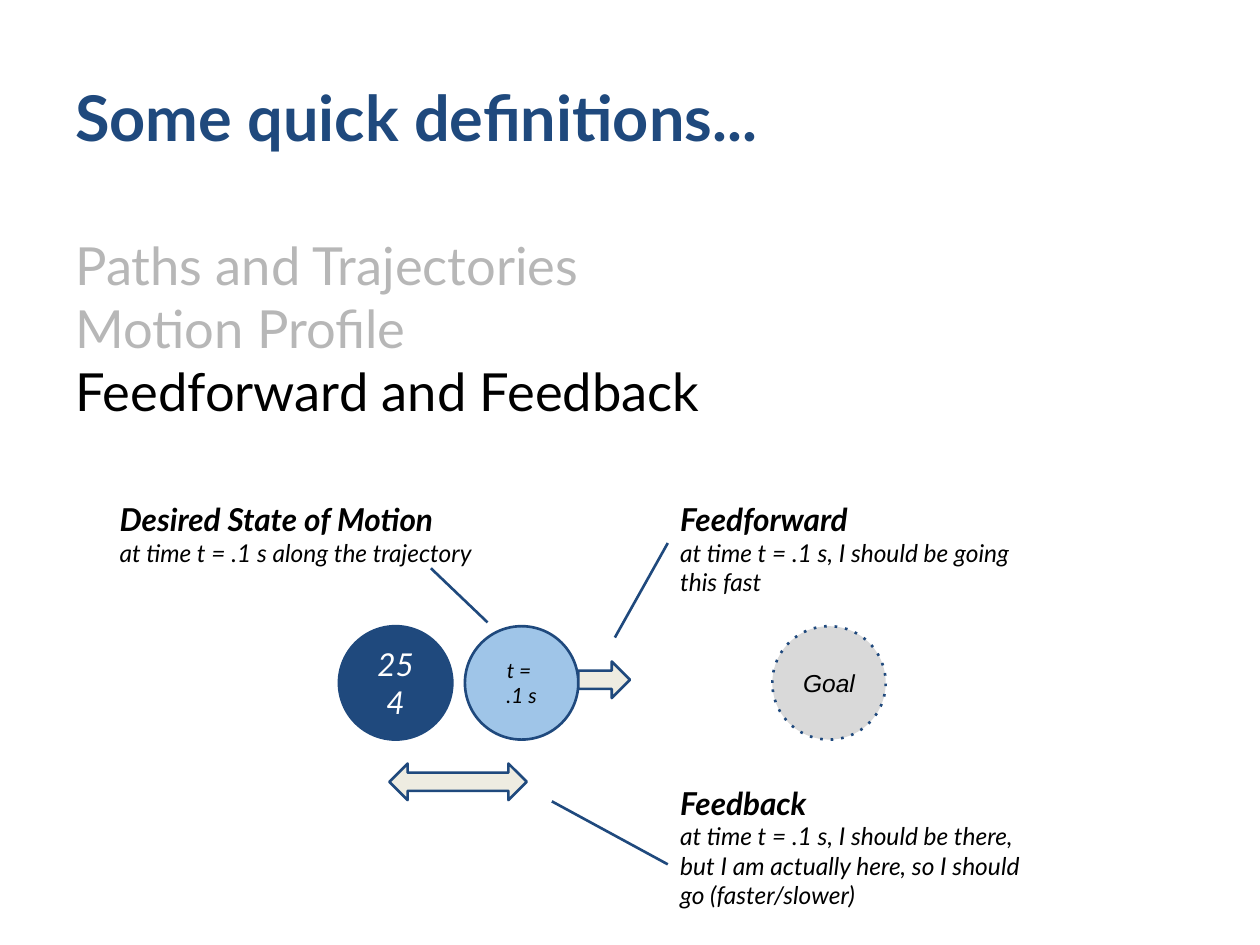
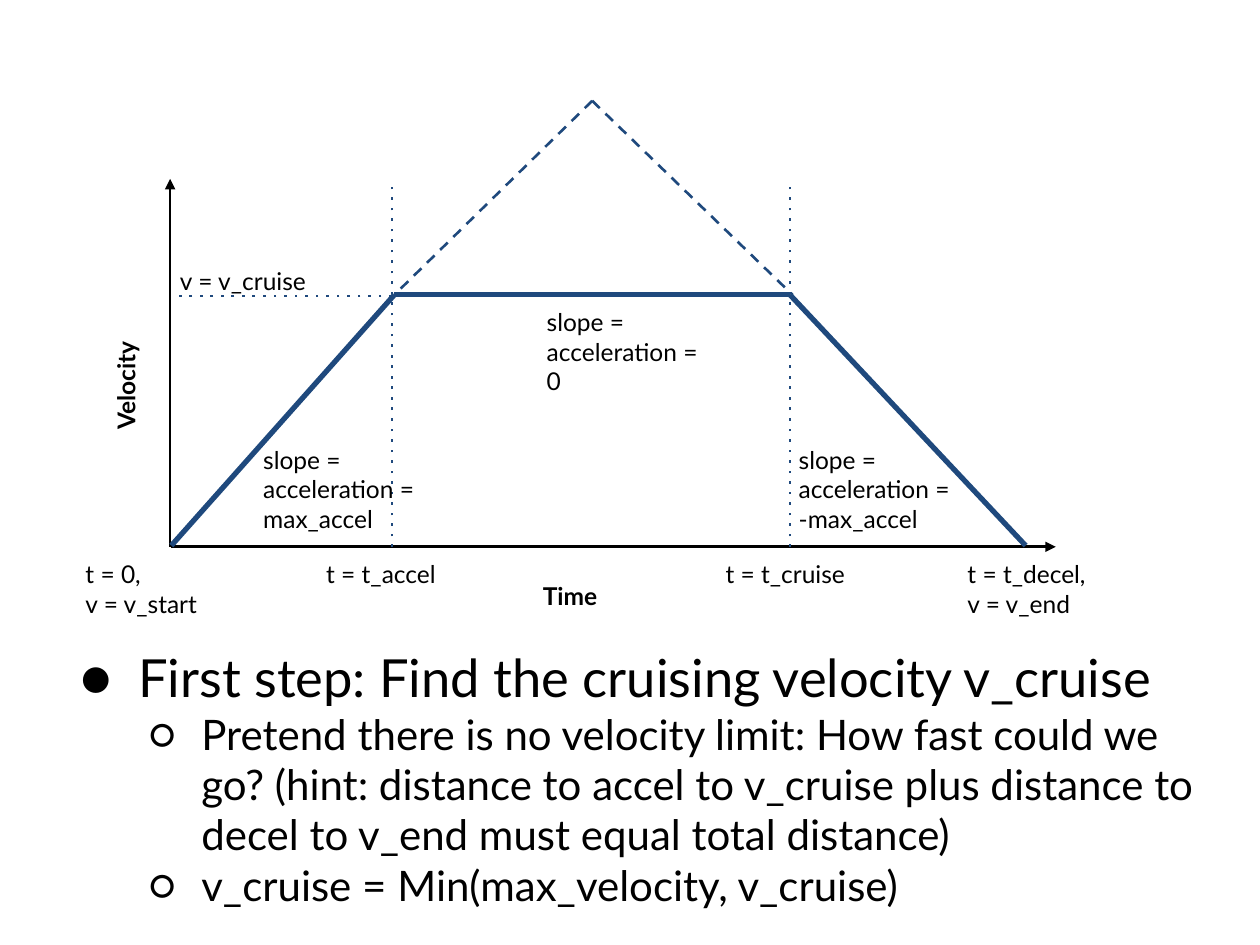
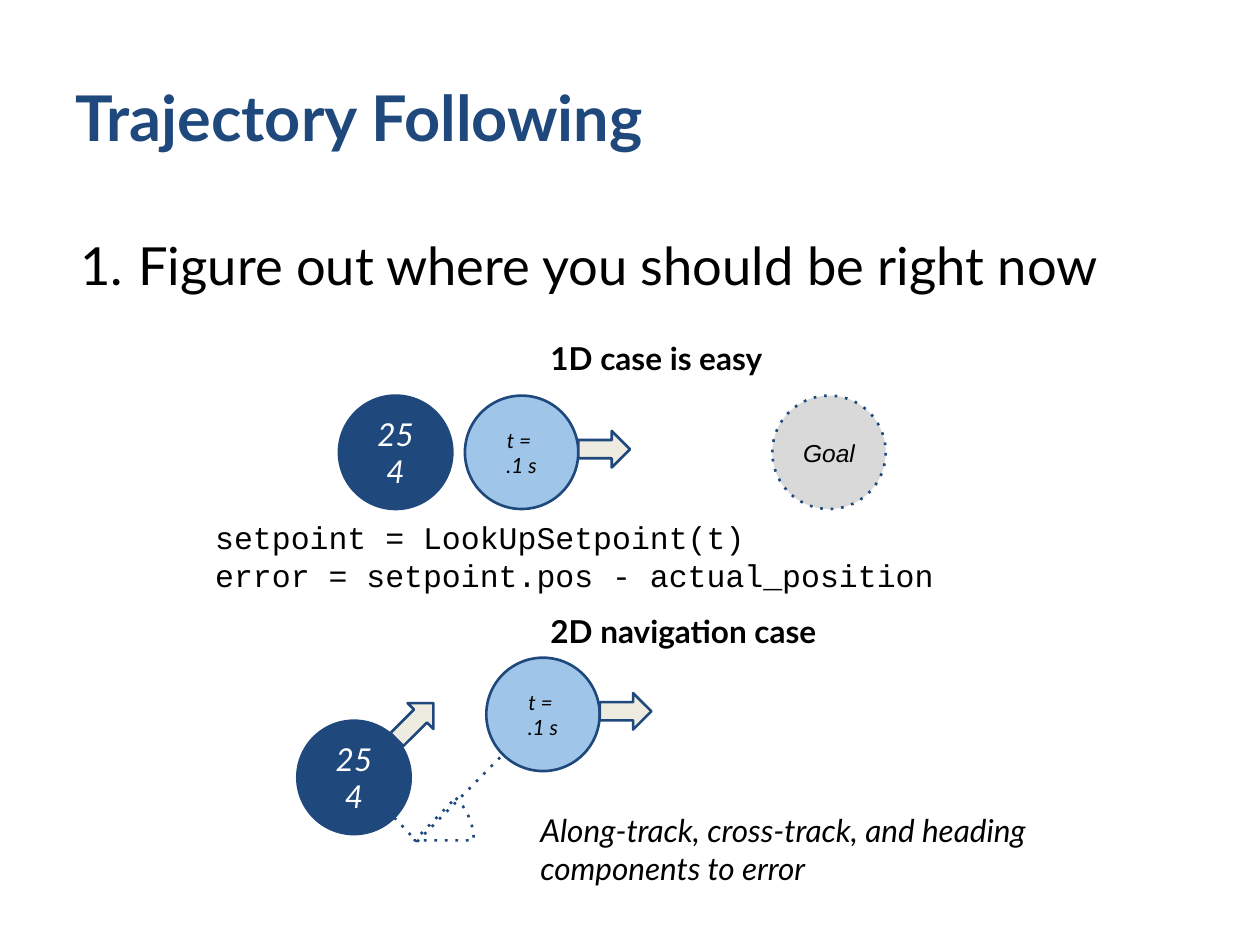
from lxml.etree import SubElement
from pptx import Presentation
from pptx.dml.color import RGBColor
from pptx.enum.shapes import MSO_CONNECTOR, MSO_SHAPE
from pptx.enum.text import MSO_ANCHOR, PP_ALIGN
from pptx.oxml.ns import qn
from pptx.util import Inches, Pt

COLUMNS, ROWS = 100, 75
CELL = Inches(10) / COLUMNS
COLORS = {
    "navy": "1F497D",
    "sky": "9FC5E8",
    "cream": "EEECE1",
    "mist": "D9D9D9",
    "gray": "B7B7B7",
    "black": "000000",
    "white": "FFFFFF",
}
FONT = "Lato"
TITLE = {"size": 36, "bold": True, "color": "navy"}
BODY = {"size": 30}
HEAD = {"size": 18, "bold": True}
LABEL = {"size": 14}
AXIS = {"size": 14, "bold": True}
NOTE = {"size": 18, "italic": True}
CODE = {"size": 18, "name": "Courier New"}
BALL = 9
ARROW = (4.1, 2.9)


def grid(*cells):
    return [round(cell * CELL) for cell in cells]


def rgb(name):
    return RGBColor.from_string(COLORS[name])


def style_font(font, style):
    values = {"name": FONT, "color": "black", **style}
    font.color.rgb = rgb(values.pop("color"))
    values["size"] = Pt(values["size"])
    for name, value in values.items():
        setattr(font, name, value)


def add_bullet(para, mark, margin, indent):
    props = para._p.get_or_add_pPr()
    props.set("marL", str(Inches(margin)))
    props.set("indent", str(Inches(indent)))
    color = SubElement(props, qn("a:buClr"))
    SubElement(color, qn("a:srgbClr"), val=COLORS["black"])
    SubElement(props, qn("a:buFont"), typeface=FONT)
    if mark == "1.":
        SubElement(props, qn("a:buAutoNum"), type="arabicPeriod")
    else:
        SubElement(props, qn("a:buChar"), char=mark)


def fill_text(shape, lines, align=PP_ALIGN.LEFT, anchor=MSO_ANCHOR.TOP, side=0.1):
    frame = shape.text_frame
    values = {
        "word_wrap": True,
        "vertical_anchor": anchor,
        "margin_left": Inches(side),
        "margin_right": Inches(side),
        "margin_top": Inches(0.1),
        "margin_bottom": Inches(0.1),
    }
    for name, value in values.items():
        setattr(frame, name, value)
    for index, (words, style, *bullet) in enumerate(lines):
        para = frame.add_paragraph() if index else frame.paragraphs[0]
        para.alignment = align
        if bullet:
            add_bullet(para, *bullet)
        span = para.add_run()
        span.text = words
        style_font(span.font, style)


def add_text(page, box, lines, **layout):
    shape = page.shapes.add_textbox(*grid(*box))
    fill_text(shape, lines, **layout)
    return shape


def style_line(shape, color="navy", width=1.5, dash=None, arrow=False):
    shape.line.color.rgb = rgb(color)
    shape.line.width = Pt(width)
    outline = shape._element.spPr.find(qn("a:ln"))
    if dash:
        SubElement(outline, qn("a:prstDash"), val=dash)
    if arrow:
        SubElement(outline, qn("a:tailEnd"), type="triangle")


def add_line(page, start, end, **style):
    line = page.shapes.add_connector(MSO_CONNECTOR.STRAIGHT, *grid(*start, *end))
    style_line(line, **style)
    SubElement(line._element.spPr, qn("a:effectLst"))


def add_figure(page, kind, box, fill=None, dash=None):
    shape = page.shapes.add_shape(kind, *grid(*box))
    shape.shadow.inherit = False
    if fill:
        shape.fill.solid()
        shape.fill.fore_color.rgb = rgb(fill)
    else:
        shape.fill.background()
    style_line(shape, dash=dash)
    return shape


def add_ball(page, left, top, fill, lines, dash=None, side=0.1):
    ball = add_figure(page, MSO_SHAPE.OVAL, (left, top, BALL, BALL), fill, dash)
    fill_text(ball, lines, PP_ALIGN.CENTER, MSO_ANCHOR.MIDDLE, side)


def add_arrow(page, left, top, turn=0):
    arrow = add_figure(page, MSO_SHAPE.RIGHT_ARROW, (left, top, *ARROW), "cream")
    arrow.rotation = turn


def add_robot(page, left, top):
    add_ball(page, left, top, "navy", [("254", {**NOTE, "color": "white"})], side=0.11)


def add_setpoint(page, left, top):
    style = {"size": 12, "italic": True}
    add_ball(page, left, top, "sky", [("t = ", style), (".1 s", style)])
    add_arrow(page, left + BALL, top + 2.8)


def add_track(page, left, top):
    goal = {"size": 14, "italic": True, "name": "Arial"}
    add_ball(page, left + 34.4, top, "mist", [("Goal", goal)], dash="dot")
    add_robot(page, left, top)
    add_setpoint(page, left + 10, top)


def add_title(page, words):
    add_text(page, (5, 3, 90, 12.5), [(words, TITLE)], anchor=MSO_ANCHOR.MIDDLE)


def add_callout(page, box, head, note, start, end):
    lines = [(head, {**HEAD, "italic": True}), (note, {**LABEL, "italic": True})]
    add_text(page, box, lines)
    left, top = box[:2]
    add_line(page, (left + start[0], top + start[1]), (left + end[0], top + end[1]))


def add_profile(page, left, base):
    accel, cruise, stop = 17.6, 49.2, 67.9
    speed, peak, marker = 20, 35.4, 28.9

    def draw(start, end, **style):
        points = [(left + x, base - y) for x, y in (start, end)]
        add_line(page, *points, **style)

    draw((0, 0), (0, 29.2), color="black", arrow=True)
    draw((0.1, 0), (70.3, 0), color="black", arrow=True)
    corners = [(0.1, 0.1), (accel + 0.2, speed), (cruise, speed), (stop, 0.1)]
    for start, end in zip(corners, corners[1:]):
        draw(start, end, width=3)
    for time in (accel, cruise):
        draw((time, 0), (time, marker), dash="dot")
        draw((33.5, peak), (time + 0.2, speed), dash="dash")
    draw((accel, speed - 0.1), (0.1, speed - 0.1), dash="dot")

    slope = "slope = acceleration = "
    labels = [
        (-7.7, 0, ["t = 0,", "v = v_start"], LABEL),
        (11.4, 0, ["t = t_accel"], LABEL),
        (43.1, 0, ["t = t_cruise"], LABEL),
        (62.3, 0, ["t = t_decel,", "v = v_end"], LABEL),
        (28.6, -1.7, ["Time"], AXIS),
        (-0.2, 23.3, ["v = v_cruise"], LABEL),
        (6.4, 9.1, [slope + "max_accel"], LABEL),
        (28.9, 20, [slope + "0"], LABEL),
        (48.9, 9.1, [slope + "-max_accel"], LABEL),
        (-10.2, 18.9, ["Velocity"], AXIS),
    ]
    for x, y, lines, style in labels:
        box = (left + x, base - y, 15.1, 6.1)
        label = add_text(page, box, [(words, style) for words in lines])
    label.rotation = 270


def add_navigation(page, left, top):
    add_robot(page, left, top + 5)
    add_setpoint(page, left + 15, top)
    add_arrow(page, left + 7.3, top + 3.6, 315)
    corner = (left + 9.5, top + 14.6)
    add_line(page, (left + 7.7, top + 12.7), corner, dash="dot")
    add_line(page, corner, (left + 16.3, top + 7.7), dash="dot")
    heading = add_figure(
        page, MSO_SHAPE.PIE, (left + 4.6, top + 9.8, 9.4, 9.4), dash="dot"
    )
    heading.adjustments[0] = 188.48
    heading.adjustments[1] = 0
    error = "Along-track, cross-track, and heading components to error"
    add_text(page, (left + 18.3, top + 11.2, 44.6, 6.3), [(error, NOTE)])


def build_definitions(page):
    add_title(page, "Some quick definitions...")
    muted = {**BODY, "color": "gray"}
    topics = [
        ("Paths and Trajectories", muted),
        ("Motion Profile", muted),
        ("Feedforward and Feedback", BODY),
    ]
    add_text(page, (5, 17.5, 90, 17.5), topics)
    add_track(page, 26.9, 49.7)
    add_figure(page, MSO_SHAPE.LEFT_RIGHT_ARROW, (30.9, 60.6, 10.9, 2.9), "cream")
    callouts = [
        ((53, 38.7, 30.8, 9), "Feedforward",
         "at time t = .1 s, I should be going this fast",
         (-4.2, 11.9), (0, 4.4)),
        ((53, 61.2, 30.8, 9), "Feedback",
         "at time t = .1 s, I should be there, but I am actually here, "
         "so I should go (faster/slower)",
         (0, 7.4), (-9.2, 2.4)),
        ((8.5, 38.7, 36.1, 9), "Desired State of Motion",
         "at time t = .1 s along the trajectory",
         (30.2, 10.7), (25.7, 6.4)),
    ]
    for callout in callouts:
        add_callout(page, *callout)


def build_profile(page):
    step = {"size": 24}
    bullets = [
        ("First step: Find the cruising velocity v_cruise", BODY, "●", 0.5, -0.46),
        ("Pretend there is no velocity limit: How fast could we go? "
         "(hint: distance to accel to v_cruise plus distance to decel to v_end "
         "must equal total distance)", step, "○", 1, -0.42),
        ("v_cruise = Min(max_velocity, v_cruise)", step, "○", 1, -0.42),
    ]
    add_text(page, (5, 50.2, 93.7, 24.1), bullets)
    add_profile(page, 13.5, 43.4)


def build_following(page):
    add_title(page, "Trajectory Following")
    step = ("Figure out where you should be right now", BODY, "1.", 0.5, -0.46)
    add_text(page, (5, 17.5, 90, 6.9), [step])
    add_track(page, 26.9, 31.4)
    for top, words in ((25.9, "1D case is easy"), (47.6, "2D navigation case")):
        add_text(page, (42.7, top, 29.1, 6.3), [(words, HEAD)])
    code = ["setpoint = LookUpSetpoint(t)", "error = setpoint.pos - actual_position"]
    add_text(page, (16.1, 40.1, 70.6, 6.3), [(line, CODE) for line in code])
    add_navigation(page, 23.6, 52.2)


def main():
    deck = Presentation()
    deck.slide_width, deck.slide_height = grid(COLUMNS, ROWS)
    for build in (build_definitions, build_profile, build_following):
        build(deck.slides.add_slide(deck.slide_layouts[6]))
    deck.save("out.pptx")


if __name__ == "__main__":
    main()
